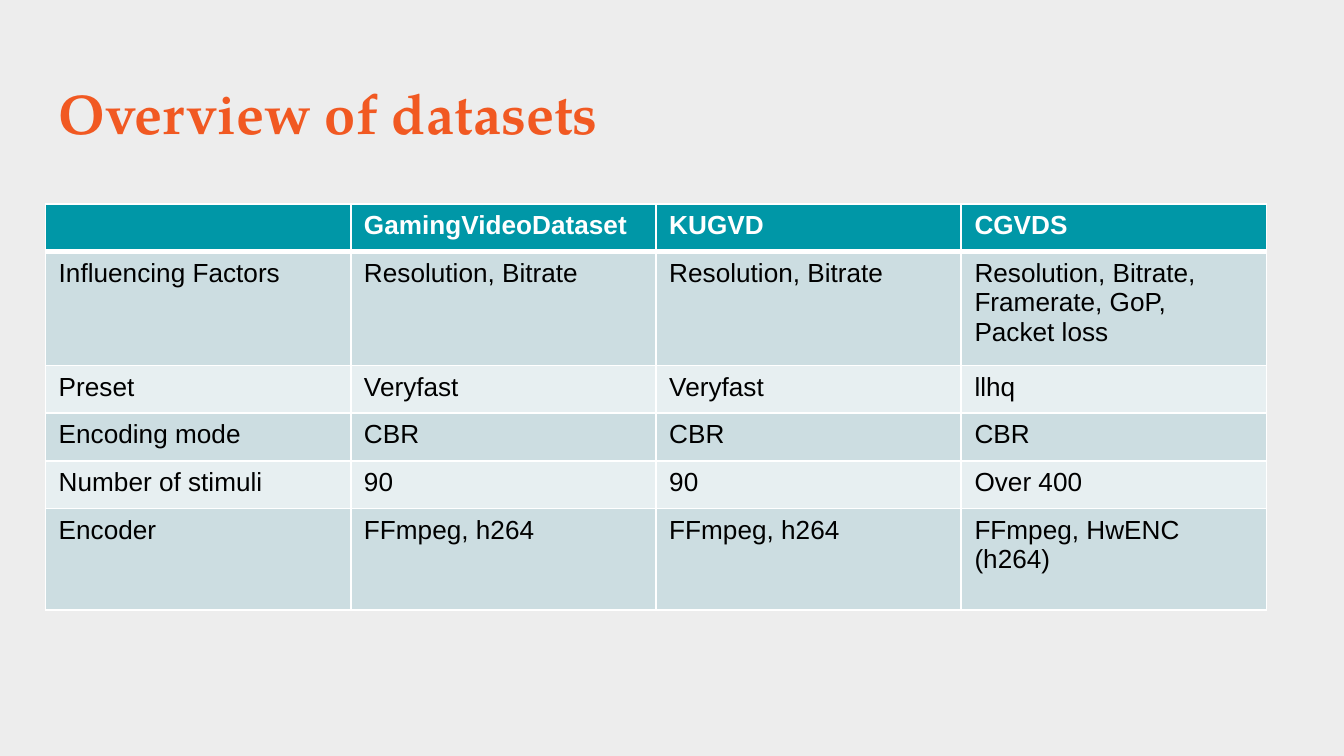
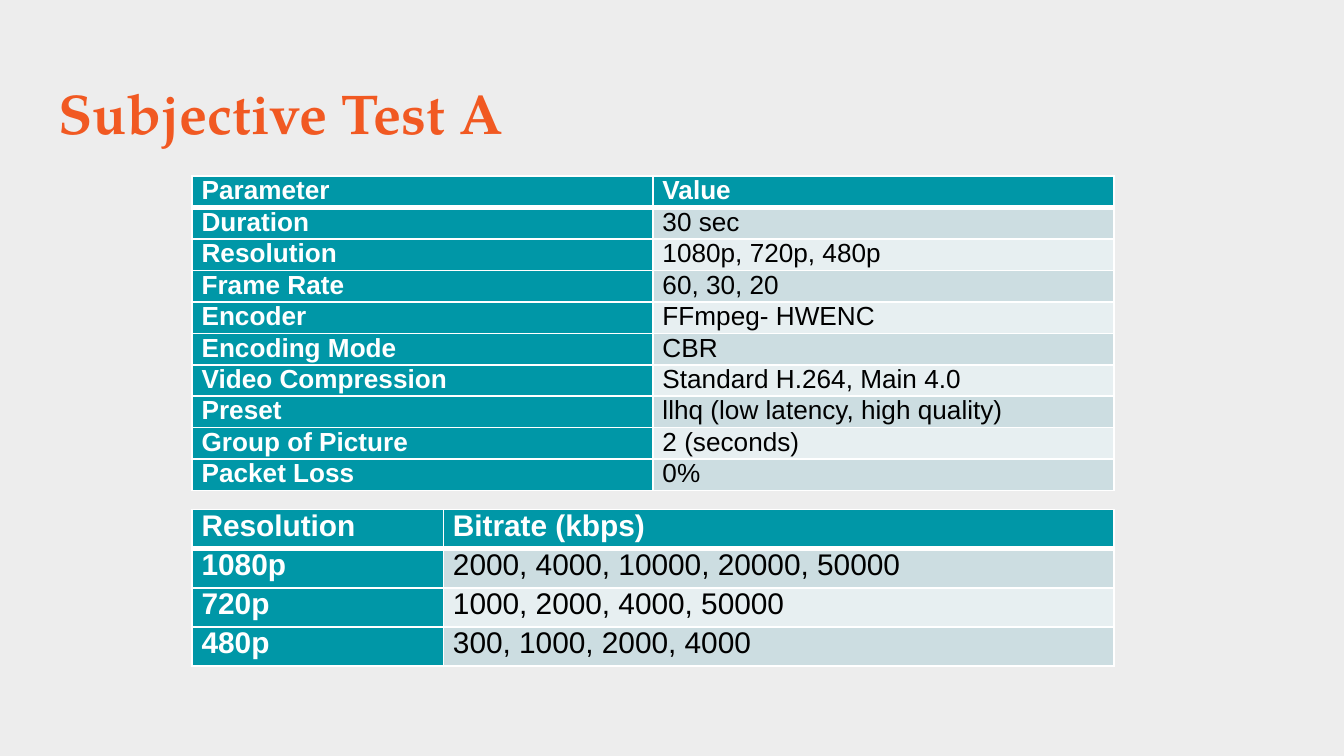
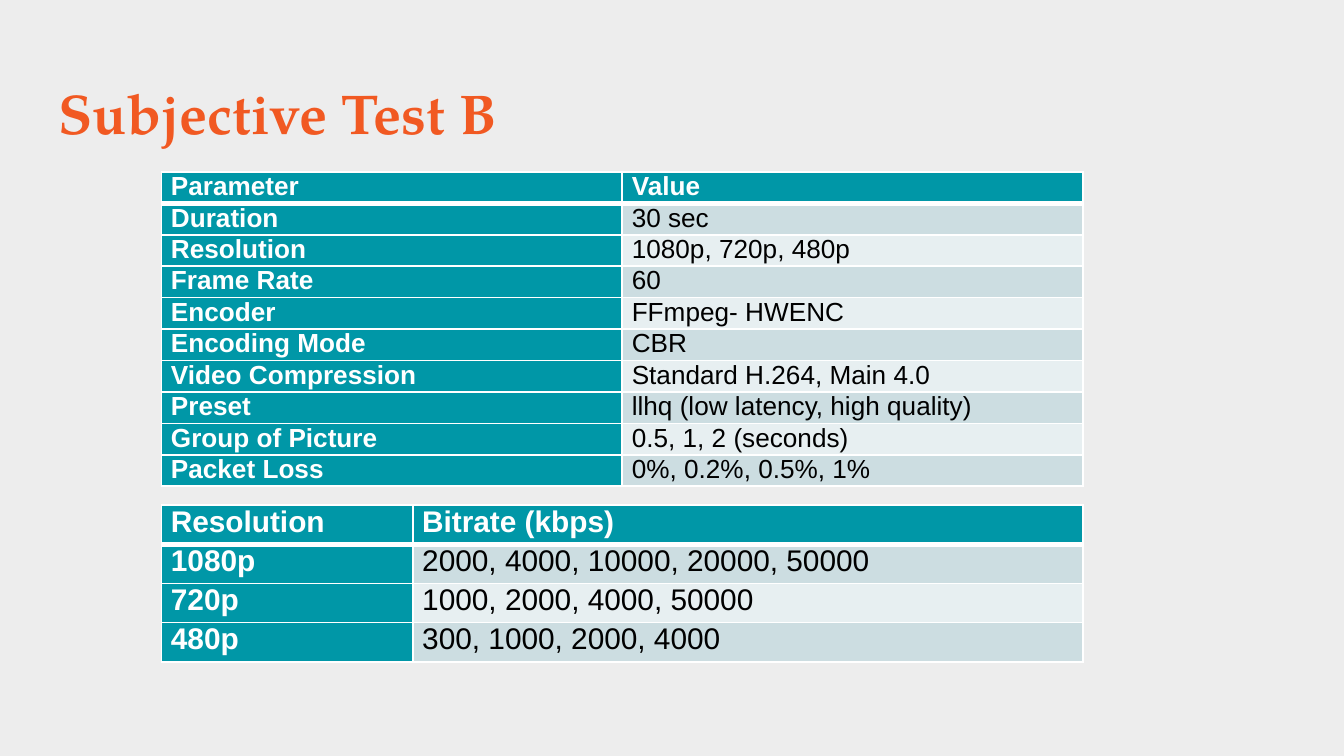
from dataclasses import dataclass

import lxml.etree
import pptx
import pptx.dml.color
import pptx.oxml.ns
import pptx.presentation
import pptx.slide
import pptx.table
import pptx.util
from pptx.util import Cm, Pt

RGBColor = pptx.dml.color.RGBColor
BACKGROUND = RGBColor(0xED, 0xED, 0xED)
ORANGE = RGBColor(0xF1, 0x59, 0x22)
TEAL = RGBColor(0x00, 0x97, 0xA7)
BAND_DARK = RGBColor(0xCC, 0xDD, 0xE1)
BAND_LIGHT = RGBColor(0xE7, 0xEF, 0xF1)
WHITE = RGBColor(0xFF, 0xFF, 0xFF)
BLACK = RGBColor(0x00, 0x00, 0x00)

TITLE_FONT = "TeX Gyre Pagella"
BODY_FONT = "Arial"
MARGIN = Cm(0.86)
BITRATE_OFFSET = Cm(6.3)


@dataclass(frozen=True)
class TableStyle:
    column_widths: list[pptx.util.Length]
    row_heights: list[pptx.util.Length]
    font_size: pptx.util.Length
    inset_x: pptx.util.Length = Cm(0.18)
    inset_y: pptx.util.Length = Cm(0)
    header_column: bool = True


@dataclass(frozen=True)
class SubjectiveTest:
    title: str
    left: pptx.util.Length
    top: pptx.util.Length
    frame_rate: str
    group_of_picture: str
    packet_loss: str


OVERVIEW_STYLE = TableStyle(
    [Cm(5.77)] * 4,
    [Cm(0.9), Cm(2.15), Cm(0.9), Cm(0.9), Cm(0.9), Cm(1.92)],
    Pt(14), Cm(0.25), Cm(0.13), header_column=False,
)
PARAMETER_STYLE = TableStyle([Cm(8.71)] * 2, [Cm(0.55)] * 10, Pt(14))
BITRATE_STYLE = TableStyle([Cm(4.75), Cm(12.67)], [Cm(0.74)] * 4, Pt(16))

OVERVIEW_ROWS = [
    ["", "GamingVideoDataset", "KUGVD", "CGVDS"],
    ["Influencing Factors", "Resolution, Bitrate", "Resolution, Bitrate",
     "Resolution, Bitrate, Framerate, GoP, Packet loss"],
    ["Preset", "Veryfast", "Veryfast", "llhq"],
    ["Encoding mode", "CBR", "CBR", "CBR"],
    ["Number of stimuli", "90", "90", "Over 400"],
    ["Encoder", "FFmpeg, h264", "FFmpeg, h264", "FFmpeg, HwENC (h264)"],
]
BITRATE_ROWS = [
    ["Resolution", "Bitrate (kbps)"],
    ["1080p", "2000, 4000, 10000, 20000, 50000"],
    ["720p", "1000, 2000, 4000, 50000"],
    ["480p", "300, 1000, 2000, 4000"],
]
TESTS = [
    SubjectiveTest("Subjective Test A", Cm(3.63), Cm(3.33),
                   "60, 30, 20", "2 (seconds)", "0%"),
    SubjectiveTest("Subjective Test B", Cm(3.05), Cm(3.25),
                   "60", "0.5, 1, 2 (seconds)", "0%, 0.2%, 0.5%, 1%"),
]


def parameter_rows(test: SubjectiveTest) -> list[list[str]]:
    return [
        ["Parameter", "Value"],
        ["Duration", "30 sec"],
        ["Resolution", "1080p, 720p, 480p"],
        ["Frame Rate", test.frame_rate],
        ["Encoder", "FFmpeg- HWENC"],
        ["Encoding Mode", "CBR"],
        ["Video Compression", "Standard H.264, Main 4.0"],
        ["Preset", "llhq (low latency, high quality)"],
        ["Group of Picture", test.group_of_picture],
        ["Packet Loss", test.packet_loss],
    ]


def add_titled_slide(deck: pptx.presentation.Presentation, title: str) -> pptx.slide.Slide:
    slide = deck.slides.add_slide(deck.slide_layouts[6])
    frame = slide.shapes.add_textbox(MARGIN, Cm(1.24), Cm(23.67), Cm(1.6)).text_frame
    frame.word_wrap = True
    frame.margin_left = frame.margin_right = Cm(0.25)
    frame.margin_top = frame.margin_bottom = Cm(0.25)
    frame.text = title
    font = frame.paragraphs[0].runs[0].font
    font.name, font.size, font.bold = TITLE_FONT, Pt(30), True
    font.color.rgb = ORANGE
    return slide


def add_border(cell: pptx.table._Cell, side: str, width: pptx.util.Length) -> None:
    qn = pptx.oxml.ns.qn
    line = lxml.etree.SubElement(
        cell._tc.get_or_add_tcPr(), qn(f"a:ln{side}"), w=str(int(width)))
    fill = lxml.etree.SubElement(line, qn("a:solidFill"))
    lxml.etree.SubElement(fill, qn("a:srgbClr"), val=str(WHITE))


def format_cell(cell: pptx.table._Cell, text: str, row: int, column: int,
                style: TableStyle) -> None:
    is_header = row == 0 or (style.header_column and column == 0)
    # The rule under the heading row is shared by the cells on both sides.
    add_border(cell, "L", Pt(1))
    add_border(cell, "R", Pt(1))
    add_border(cell, "T", Pt(3 if row == 1 else 1))
    add_border(cell, "B", Pt(3 if row == 0 else 1))
    cell.fill.solid()
    band = BAND_DARK if row % 2 else BAND_LIGHT
    cell.fill.fore_color.rgb = TEAL if is_header else band
    cell.margin_left = cell.margin_right = style.inset_x
    cell.margin_top = cell.margin_bottom = style.inset_y
    paragraph = cell.text_frame.paragraphs[0]
    if not text:
        # An empty cell still takes its height from its end mark.
        lxml.etree.SubElement(paragraph._p, pptx.oxml.ns.qn("a:endParaRPr"),
                              sz=str(int(style.font_size.pt * 100)))
        return
    paragraph.text = text
    font = paragraph.runs[0].font
    font.name, font.size, font.bold = BODY_FONT, style.font_size, is_header
    font.color.rgb = WHITE if is_header else BLACK


def add_data_table(slide: pptx.slide.Slide, left: int, top: int,
                   rows: list[list[str]], style: TableStyle) -> None:
    table = slide.shapes.add_table(
        len(rows), len(rows[0]), left, top,
        sum(style.column_widths), sum(style.row_heights)).table
    table.horz_banding = False
    for column, width in zip(table.columns, style.column_widths):
        column.width = width
    for row, height in zip(table.rows, style.row_heights):
        row.height = height
    for row_index, texts in enumerate(rows):
        for column_index, text in enumerate(texts):
            format_cell(table.cell(row_index, column_index), text,
                        row_index, column_index, style)


def main() -> None:
    deck = pptx.Presentation()
    deck.slide_width, deck.slide_height = Cm(25.4), Cm(14.29)
    background = deck.slide_master.background.fill
    background.solid()
    background.fore_color.rgb = BACKGROUND

    overview = add_titled_slide(deck, "Overview of datasets")
    add_data_table(overview, MARGIN, Cm(3.86), OVERVIEW_ROWS, OVERVIEW_STYLE)

    for test in TESTS:
        slide = add_titled_slide(deck, test.title)
        add_data_table(slide, test.left, test.top + BITRATE_OFFSET,
                       BITRATE_ROWS, BITRATE_STYLE)
        add_data_table(slide, test.left, test.top, parameter_rows(test), PARAMETER_STYLE)

    deck.save("out.pptx")


if __name__ == "__main__":
    main()
